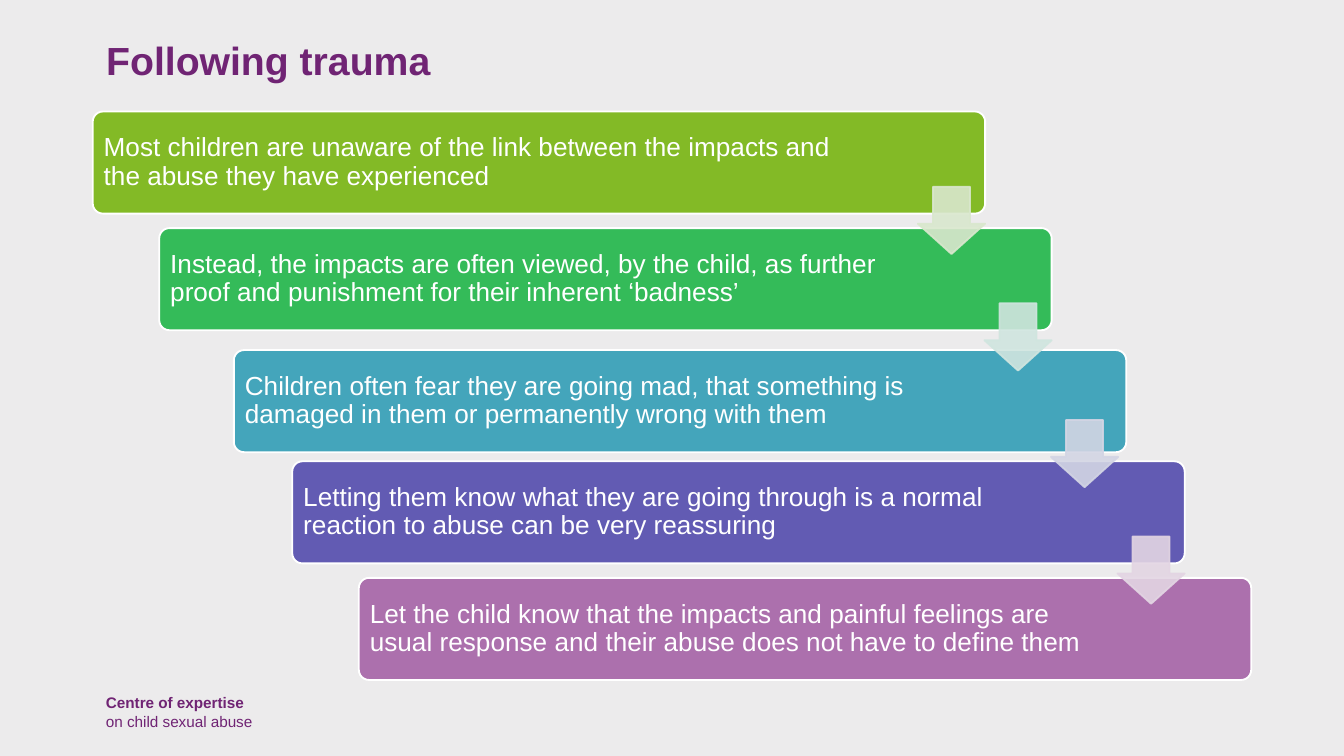
from lxml.etree import SubElement
from pptx import Presentation
from pptx.dml.color import RGBColor
from pptx.enum.shapes import MSO_SHAPE as Shape
from pptx.enum.text import MSO_ANCHOR as Anchor, PP_ALIGN as Align
from pptx.oxml.ns import qn
from pptx.util import Inches, Pt

COLORS = {"background": "ECEBEC", "brand": "702474", "white": "FFFFFF"}
TITLE = "Following trauma"
FOOTER = ("Centre of expertise", "on child sexual abuse")
STEPS = [
    ("Most children are unaware of the link between the impacts and the abuse they have experienced",
     "83BA26", "D9E7CD"),
    ("Instead, the impacts are often viewed, by the child, as further proof and punishment "
     "for their inherent ‘badness’", "34BB59", "D0E5DF"),
    ("Children often fear they are going mad, that something is damaged in them or permanently "
     "wrong with them", "44A5BB", "D3D5E4"),
    ("Letting them know what they are going through is a normal reaction to abuse can be very "
     "reassuring", "625BB3", "E3D5E3"),
    ("Let the child know that the impacts and painful feelings are usual response and their abuse "
     "does not have to define them", "AC70AD", None),
]
SLIDE_WIDTH = Inches(10)
SLIDE_HEIGHT = SLIDE_WIDTH * 9 // 16
LEFT, TOP = 0.69, 0.83
BAR_WIDTH, BAR_HEIGHT = 6.64, 0.76
STEP_X = (2.67 - LEFT) / (len(STEPS) - 1)
STEP_Y = (4.3 - TOP) / (len(STEPS) - 1)
NUDGES = {2: (0.06, 0.04)}
ARROW_SIZE = 0.5
ARROW_LEFT, ARROW_TOP = LEFT + BAR_WIDTH - ARROW_SIZE, 1.39


def rgb(value):
    return RGBColor.from_string(value)


def set_font(font, size, color, bold=False):
    font.name, font.size, font.bold = "Arial", Pt(size), bold
    font.color.rgb = rgb(color)


def add_block(slide, kind, box, adjustments, fill, line):
    shape = slide.shapes.add_shape(kind, *map(Inches, box))
    shape.shadow.inherit = False
    for index, value in enumerate(adjustments):
        shape.adjustments[index] = value
    shape.fill.solid()
    shape.fill.fore_color.rgb = rgb(fill)
    shape.line.color.rgb = rgb(line)
    shape.line.width = Pt(1)
    return shape


def add_bar(slide, index, text, color):
    nudge_x, nudge_y = NUDGES.get(index, (0, 0))
    box = (LEFT + index * STEP_X + nudge_x, TOP + index * STEP_Y + nudge_y, BAR_WIDTH, BAR_HEIGHT)
    bar = add_block(slide, Shape.ROUNDED_RECTANGLE, box, [0.1], color, COLORS["white"])
    frame = bar.text_frame
    frame.word_wrap = True
    frame.vertical_anchor = Anchor.MIDDLE
    frame.margin_left, frame.margin_right = Inches(0.06), Inches(1.04)
    frame.margin_top = frame.margin_bottom = Inches(0.06)
    paragraph = frame.paragraphs[0]
    paragraph.text = text
    paragraph.alignment = Align.LEFT
    paragraph.line_spacing = 0.9
    set_font(paragraph.font, 14, COLORS["white"])


def add_arrow(slide, index, color):
    box = (ARROW_LEFT + index * STEP_X, ARROW_TOP + index * STEP_Y, ARROW_SIZE, ARROW_SIZE)
    arrow = add_block(slide, Shape.DOWN_ARROW, box, [0.55, 0.45], color, color)
    properties = arrow.element.spPr
    for parent in (properties, properties.find(qn("a:ln"))):
        fill_color = parent.find(qn("a:solidFill")).find(qn("a:srgbClr"))
        SubElement(fill_color, qn("a:alpha"), val="90000")


def add_title(slide):
    title = slide.shapes.title
    title.left, title.top, title.width, title.height = map(Inches, (LEFT, 0.26, 8.36, 0.7))
    title.text_frame.vertical_anchor = Anchor.TOP
    paragraph = title.text_frame.paragraphs[0]
    paragraph.text = TITLE
    paragraph.alignment = Align.LEFT
    paragraph.line_spacing = 0.9
    set_font(paragraph.font, 21, COLORS["brand"], True)


def add_footer(slide):
    footer = slide.shapes.add_textbox(*map(Inches, (LEFT, 5.11, 1.79, 0.38)))
    footer.text_frame.word_wrap = True
    paragraph = footer.text_frame.paragraphs[0]
    set_font(paragraph.font, 8.2, COLORS["brand"])
    name, topic = FOOTER
    run = paragraph.add_run()
    run.text = name
    run.font.bold = True
    paragraph.add_line_break()
    paragraph.add_run().text = topic


def main():
    presentation = Presentation()
    presentation.slide_width, presentation.slide_height = SLIDE_WIDTH, SLIDE_HEIGHT
    slide = presentation.slides.add_slide(presentation.slide_layouts[5])
    slide.background.fill.solid()
    slide.background.fill.fore_color.rgb = rgb(COLORS["background"])
    add_footer(slide)
    add_title(slide)
    for index, (text, color, _) in enumerate(STEPS):
        add_bar(slide, index, text, color)
    for index, (_, _, color) in enumerate(STEPS[:-1]):
        add_arrow(slide, index, color)
    presentation.save("out.pptx")


if __name__ == "__main__":
    main()
